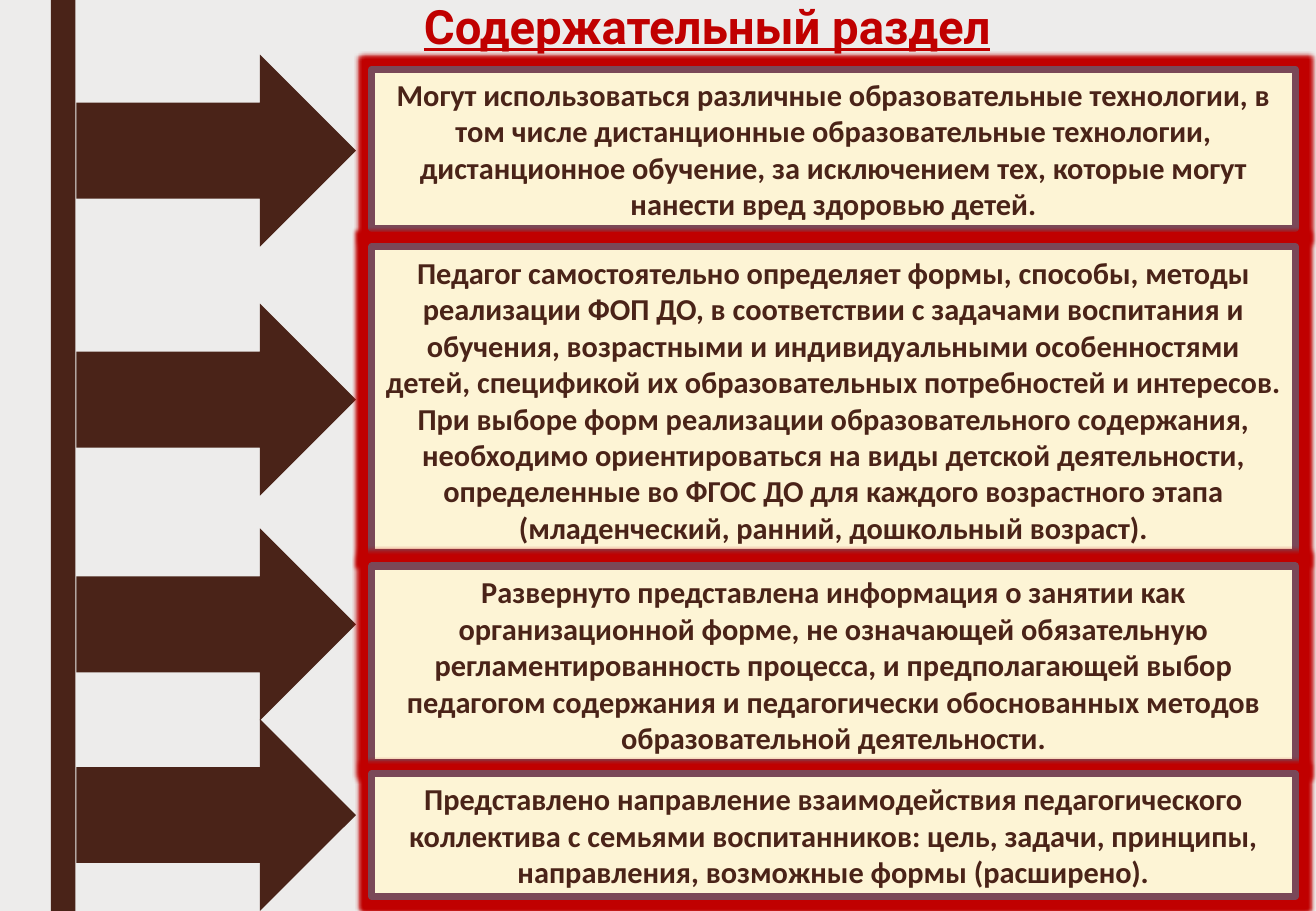
from lxml.etree import SubElement
from pptx import Presentation
from pptx.dml.color import RGBColor
from pptx.enum.shapes import MSO_SHAPE as Shape
from pptx.enum.text import MSO_ANCHOR as Anchor, PP_ALIGN as Align
from pptx.oxml.ns import qn
from pptx.util import Inches, Pt

WIDTH, HEIGHT = 10.83, 7.5
BROWN, CREAM, PLUM, RED, GREY = "4A2318", "FDF4D5", "7A4858", "C00000", "EDECEB"
BAR_LEFT, BAR_WIDTH = 0.42, 0.2
ARROW_LEFT, ARROW_WIDTH, ARROW_HEIGHT = 0.63, 2.3, 1.58
PANEL_LEFT, PANEL_WIDTH = 3.06, 7.6

rows = [
    (0.45, 0.57, 1.31, "Могут использоваться различные образовательные технологии, в том числе дистанционные образовательные технологии, дистанционное обучение, за исключением тех, которые могут нанести вред здоровью детей."),
    (2.5, 2.03, 2.52, "Педагог самостоятельно определяет формы, способы, методы реализации ФОП ДО, в соответствии с задачами воспитания и обучения, возрастными и индивидуальными особенностями детей, спецификой их образовательных потребностей и интересов. При выборе форм реализации образовательного содержания, необходимо ориентироваться на виды детской деятельности, определенные во ФГОС ДО для каждого возрастного этапа (младенческий, ранний, дошкольный возраст)."),
    (4.35, 4.66, 1.62, "Развернуто представлена информация о занятии как организационной форме, не означающей обязательную регламентированность процесса, и предполагающей выбор педагогом содержания и педагогически обоснованных методов образовательной деятельности."),
    (HEIGHT - ARROW_HEIGHT, 6.37, 1.01, "Представлено направление взаимодействия педагогического коллектива с семьями воспитанников: цель, задачи, принципы, направления, возможные формы (расширено)."),
]

deck = Presentation()
deck.slide_width, deck.slide_height = Inches(WIDTH), Inches(HEIGHT)
page = deck.slides.add_slide(deck.slide_layouts[6])
page.background.fill.solid()
page.background.fill.fore_color.rgb = RGBColor.from_string(GREY)


def add_block(kind, left, top, width, height, color):
    block = page.shapes.add_shape(kind, Inches(left), Inches(top), Inches(width), Inches(height))
    block.shadow.inherit = False
    block.fill.solid()
    block.fill.fore_color.rgb = RGBColor.from_string(color)
    block.line.fill.background()
    return block


def write(box, text, font_name, size, color):
    box.text_frame.word_wrap = True
    para = box.text_frame.paragraphs[0]
    para.alignment = Align.CENTER
    span = para.add_run()
    span.text = text
    span.font.name = font_name
    span.font.size = Pt(size)
    span.font.bold = True
    span.font.color.rgb = RGBColor.from_string(color)
    return span


add_block(Shape.RECTANGLE, BAR_LEFT, 0, BAR_WIDTH, HEIGHT, BROWN)

for arrow_top, panel_top, panel_height, text in rows:
    add_block(Shape.RIGHT_ARROW, ARROW_LEFT, arrow_top, ARROW_WIDTH, ARROW_HEIGHT, BROWN)
    panel = add_block(Shape.RECTANGLE, PANEL_LEFT, panel_top, PANEL_WIDTH, panel_height, CREAM)
    panel.line.color.rgb = RGBColor.from_string(PLUM)
    panel.line.width = Pt(4.25)
    effects = panel.element.spPr.find(qn("a:effectLst"))
    glow = SubElement(effects, qn("a:glow"), rad=str(Pt(5)))
    SubElement(glow, qn("a:srgbClr"), val=RED)
    panel.text_frame.vertical_anchor = Anchor.MIDDLE
    write(panel, text, "Calibri", 18, BROWN)

title = page.shapes.add_textbox(Inches(3.11), Inches(-0.07), Inches(5.42), Inches(0.57))
write(title, "Содержательный раздел", "Roboto", 28, RED).font.underline = True

deck.save("out.pptx")
